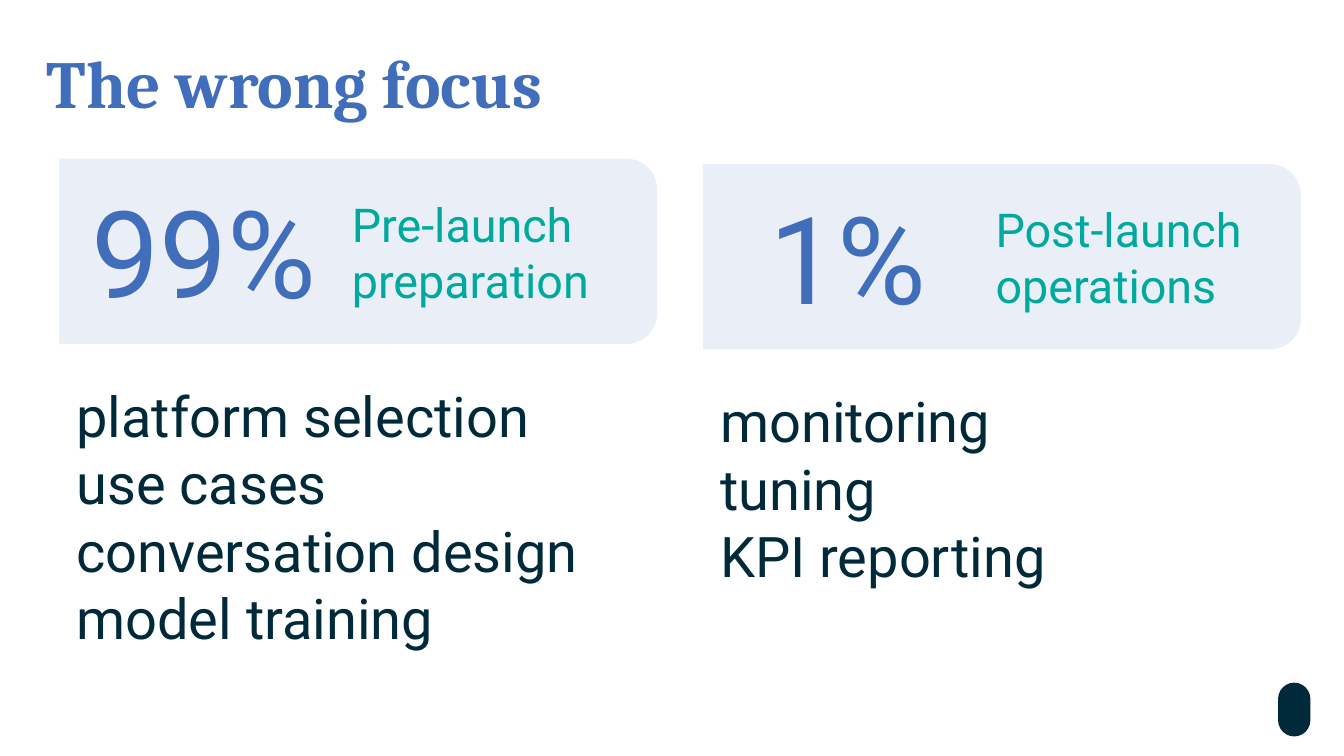
import pptx
import pptx.util
import pptx.dml.color
import pptx.enum.shapes
import pptx.enum.text

Inches = pptx.util.Inches
RGBColor = pptx.dml.color.RGBColor
MSO_SHAPE = pptx.enum.shapes.MSO_SHAPE
PP_ALIGN = pptx.enum.text.PP_ALIGN
MSO_ANCHOR = pptx.enum.text.MSO_ANCHOR

BLUE = RGBColor(0x41, 0x6E, 0xBA)
TEAL = RGBColor(0x00, 0xA9, 0x9D)
NAVY = RGBColor(0x00, 0x29, 0x39)
PALE = RGBColor(0xEA, 0xEF, 0xF7)
WHITE = RGBColor(0xFF, 0xFF, 0xFF)


class Deck:
    heading_font = "Cambria"
    body_font = "Roboto"

    def __init__(self, slide):
        self.s = slide

    def shape(self, kind, x, y, w, h, fill, radius=None):
        sp = self.s.shapes.add_shape(kind, Inches(x), Inches(y), Inches(w), Inches(h))
        sp.shadow.inherit = False
        sp.fill.solid()
        sp.fill.fore_color.rgb = fill
        sp.line.fill.background()
        if radius is not None:
            sp.adjustments[0] = radius
        return sp

    def text(self, lines, x, y, w, h, size, color, font=body_font, bold=False,
             align=PP_ALIGN.LEFT, anchor=MSO_ANCHOR.TOP):
        sp = self.s.shapes.add_textbox(Inches(x), Inches(y), Inches(w), Inches(h))
        tf = sp.text_frame
        tf.word_wrap = True
        tf.vertical_anchor = anchor
        tf.margin_left = tf.margin_right = Inches(0.1)
        tf.margin_top = tf.margin_bottom = Inches(0.1)
        for i, line in enumerate(lines):
            p = tf.add_paragraph() if i else tf.paragraphs[0]
            p.alignment = align
            r = p.add_run()
            r.text = line
            r.font.name = font
            r.font.size = pptx.util.Pt(size)
            r.font.bold = bold
            r.font.color.rgb = color
        return sp

    def title(self, title):
        self.text([title], 0.25, 0.21, 9.5, 0.6, 36, BLUE, self.heading_font, bold=True)

    def column(self, x, y, share, phase, tasks):
        self.shape(MSO_SHAPE.ROUNDED_RECTANGLE, x, y, 4.72, 1.38, PALE, 0.167)
        self.text([share], x + 0.41, y + 0.04, 1.88, 1.3, 65, BLUE, align=PP_ALIGN.CENTER)
        self.text(phase, x + 2.35, y + 0.26, 2.33, 0.87, 25, TEAL, anchor=MSO_ANCHOR.MIDDLE)
        self.shape(MSO_SHAPE.RECTANGLE, x - 0.05, y, 0.32, 1.38, WHITE)
        self.text(tasks, x + 0.3, y + 1.56, 4.38, 2.23, 30, NAVY)


def main():
    prs = pptx.Presentation()
    prs.slide_width = Inches(10)
    prs.slide_height = Inches(10) * 9 // 16
    deck = Deck(prs.slides.add_slide(prs.slide_layouts[6]))

    deck.shape(MSO_SHAPE.ROUNDED_RECTANGLE, 9.51, 5.08, 0.24, 0.4, NAVY, 0.5)
    deck.title("The wrong focus")
    deck.column(0.17, 1.18, "99%", ["Pre-launch", "preparation"],
                ["platform selection", "use cases", "conversation design", "model training"])
    deck.column(4.96, 1.22, "1%", ["Post-launch", "operations"],
                ["monitoring", "tuning", "KPI reporting"])

    prs.save("out.pptx")


if __name__ == "__main__":
    main()
